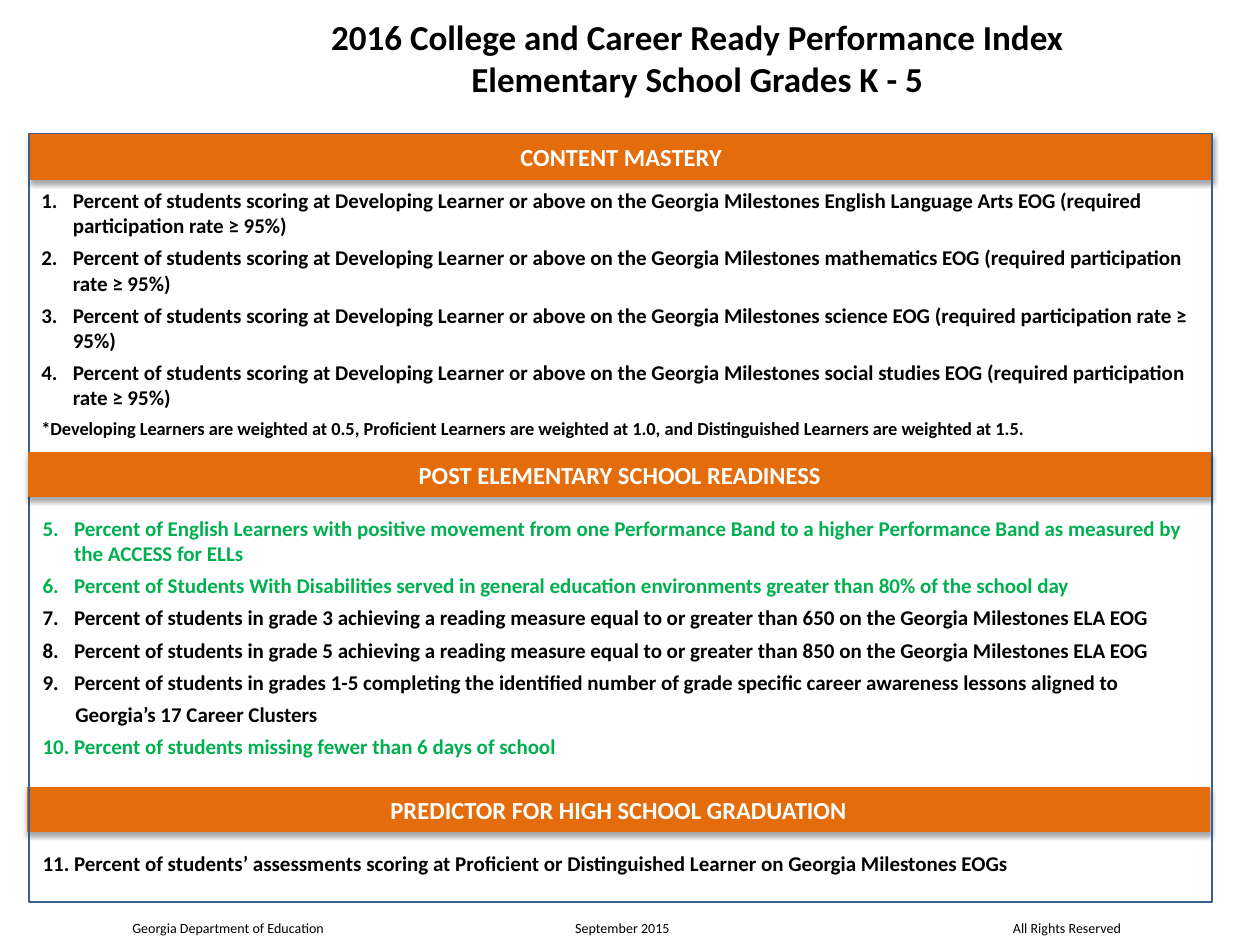
from lxml.etree import SubElement
from pptx import Presentation
from pptx.dml.color import RGBColor
from pptx.enum.shapes import MSO_SHAPE
from pptx.enum.text import MSO_ANCHOR, PP_ALIGN
from pptx.oxml.ns import qn
from pptx.util import Inches, Pt

COLORS = {"bar": "E46C0A", "frame": "3A5F8C", "text": "000000",
          "new": "00B050", "light": "FFFFFF"}
COLUMNS, ROWS = 100, 75
HANGING = 0.25


class IndexSlide:
    """Holds the style and the current slide; lengths are grid columns and rows."""

    def __init__(self, deck):
        self.slide = deck.slides.add_slide(deck.slide_layouts[6])
        self.column = deck.slide_width / COLUMNS
        self.row = deck.slide_height / ROWS

    def place(self, left, top, width, height):
        return (round(left * self.column), round(top * self.row),
                round(width * self.column), round(height * self.row))

    def fill_paragraph(self, paragraph, words, size, color="text", bold=True, **layout):
        paragraph.text = words
        for name, value in layout.items():
            setattr(paragraph, name, value)
        style = {"name": "Calibri", "size": Pt(size), "bold": bold}
        for run in paragraph.runs:
            for name, value in style.items():
                setattr(run.font, name, value)
            run.font.color.rgb = RGBColor.from_string(COLORS[color])

    def text_frame(self, area, anchor=MSO_ANCHOR.TOP):
        frame = self.slide.shapes.add_textbox(*self.place(*area)).text_frame
        frame.word_wrap = True
        frame.vertical_anchor = anchor
        return frame

    def heading(self, area, words, size):
        frame = self.text_frame(area, MSO_ANCHOR.MIDDLE)
        self.fill_paragraph(frame.paragraphs[0], words, size,
                            alignment=PP_ALIGN.CENTER)

    def box(self, area, line, line_width, fill=None):
        box = self.slide.shapes.add_shape(MSO_SHAPE.RECTANGLE, *self.place(*area))
        box.shadow.inherit = False
        box.line.color.rgb = RGBColor.from_string(COLORS[line])
        box.line.width = Pt(line_width)
        if fill:
            box.fill.solid()
            box.fill.fore_color.rgb = RGBColor.from_string(COLORS[fill])
        else:
            box.fill.background()
        return box

    def section_bar(self, left, top, words):
        bar = self.box((left, top, 93.8, 3.5), "bar", 0.75, "bar")
        effects = bar._element.spPr.find(qn("a:effectLst"))
        shadow = SubElement(effects, qn("a:outerShdw"), blurRad=str(Pt(3.1)),
                            dist=str(Pt(1.8)), dir="5400000", rotWithShape="0")
        black = SubElement(shadow, qn("a:srgbClr"), val=COLORS["text"])
        SubElement(black, qn("a:alpha"), val="35000")
        bar.text_frame.vertical_anchor = MSO_ANCHOR.MIDDLE
        self.fill_paragraph(bar.text_frame.paragraphs[0], words, 14, "light",
                            alignment=PP_ALIGN.CENTER)

    def indicators(self, area, items):
        """Each item is (first number of its run or None, words, colour, size, indent)."""
        frame = self.text_frame(area)
        for index, (start, words, color, size, indent) in enumerate(items):
            paragraph = frame.add_paragraph() if index else frame.paragraphs[0]
            properties = paragraph._p.get_or_add_pPr()
            hanging = -HANGING if start else 0
            properties.set("marL", str(Inches(indent)))
            properties.set("indent", str(Inches(hanging)))
            if start:
                SubElement(properties, qn("a:buFont"), typeface="+mj-lt")
                SubElement(properties, qn("a:buAutoNum"), type="arabicPeriod",
                           startAt=str(start))
            self.fill_paragraph(paragraph, words, size, color, space_after=Pt(4))

    def footer(self, area, parts, inset, stops):
        frame = self.text_frame(area, MSO_ANCHOR.MIDDLE)
        frame.margin_left = round(inset * self.column)
        paragraph = frame.paragraphs[0]
        tabs = SubElement(paragraph._p.get_or_add_pPr(), qn("a:tabLst"))
        for column, align in stops:
            SubElement(tabs, qn("a:tab"), pos=str(round(column * self.column)),
                       algn=align)
        self.fill_paragraph(paragraph, "\t".join(parts), 8, bold=False)


def numbered(start, words, color="text"):
    return start, words, color, 12, HANGING


def plain(words, size=12, indent=0):
    return None, words, "text", size, indent


def main():
    deck = Presentation()
    deck.slide_width, deck.slide_height = Inches(10), Inches(7.5)
    page = IndexSlide(deck)

    # Title
    page.heading((21.6, 0.1, 67.5, 9), "2016 College and Career Ready Performance "
                 "Index\vElementary School Grades K - 5", 20)

    # Section bars and the frame around them
    page.section_bar(2.4, 10.7, "CONTENT MASTERY")
    page.section_bar(2.2, 62.5, "PREDICTOR FOR HIGH SCHOOL GRADUATION")
    page.box((2.3, 10.6, 93.9, 61), "frame", 1)
    page.section_bar(2.3, 35.9, "POST ELEMENTARY SCHOOL READINESS")

    # Content mastery
    subjects = ["English Language Arts", "mathematics", "science", "social studies"]
    mastery = [numbered(1, "Percent of students scoring at Developing Learner or above "
                        f"on the Georgia Milestones {subject} EOG "
                        "(required participation rate ≥ 95%)")
               for subject in subjects]
    mastery.append(plain("*Developing Learners are weighted at 0.5, Proficient Learners "
                         "are weighted at 1.0, and Distinguished Learners are weighted "
                         "at 1.5.", 10.5))
    page.indicators((2.3, 14.4, 94.5, 21.3), mastery)

    # Post elementary school readiness
    reading = [numbered(5, f"Percent of students in grade {grade} achieving a reading "
                        f"measure equal to or greater than {score} on the Georgia "
                        "Milestones ELA EOG")
               for grade, score in ((3, 650), (5, 850))]
    page.indicators((2.4, 40.4, 94.4, 20.5), [
        numbered(5, "Percent of English Learners with positive movement from one "
                 "Performance Band to a higher Performance Band as measured by the "
                 "ACCESS for ELLs", "new"),
        numbered(5, "Percent of Students With Disabilities served in general education "
                 "environments greater than 80% of the school day", "new"),
        *reading,
        numbered(5, "Percent of students in grades 1-5 completing the identified number "
                 "of grade specific career awareness lessons aligned to"),
        plain("Georgia’s 17 Career Clusters", indent=0.26),
        numbered(10, "Percent of students missing fewer than 6 days of school", "new"),
    ])

    # Predictor for high school graduation
    page.indicators((2.4, 67, 94.4, 3), [
        numbered(11, "Percent of students’ assessments scoring at Proficient or "
                 "Distinguished Learner on Georgia Milestones EOGs")])

    # Footer
    page.footer((1.7, 72.5, 96.1, 2.3),
                ["Georgia Department of Education", "September 2015",
                 "All Rights Reserved"],
                inset=8.8, stops=((38.9, "ctr"), (78.5, "r")))

    deck.save("out.pptx")


if __name__ == "__main__":
    main()
